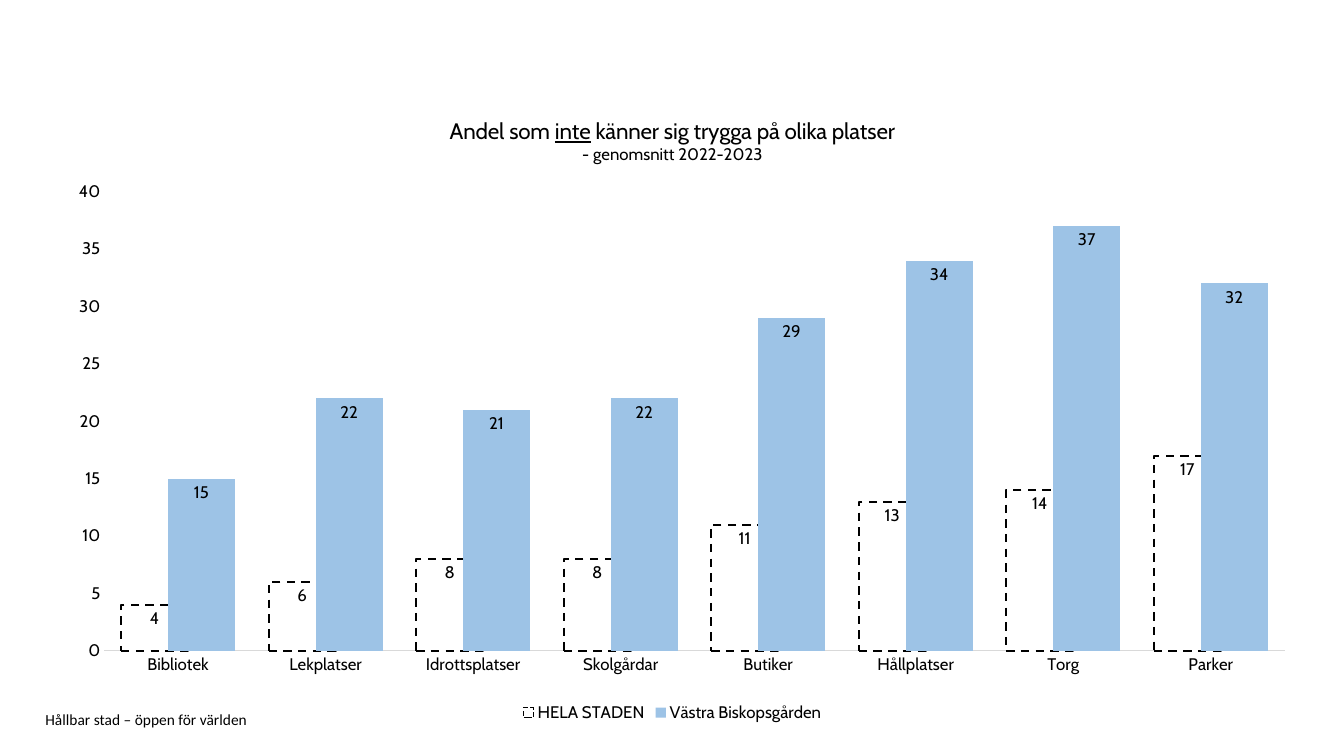
from dataclasses import dataclass

from lxml import etree
from pptx import Presentation
from pptx.chart.data import CategoryChartData
from pptx.dml.color import RGBColor
from pptx.enum.chart import XL_CHART_TYPE, XL_LABEL_POSITION, XL_LEGEND_POSITION, XL_TICK_MARK
from pptx.enum.dml import MSO_LINE
from pptx.enum.text import MSO_ANCHOR
from pptx.oxml.ns import qn
from pptx.util import Inches, Pt

CLUSTERED = XL_CHART_TYPE.COLUMN_CLUSTERED
INSIDE_END = XL_LABEL_POSITION.INSIDE_END
BOTTOM = XL_LEGEND_POSITION.BOTTOM
NO_TICK = XL_TICK_MARK.NONE
DASH = MSO_LINE.DASH
MIDDLE = MSO_ANCHOR.MIDDLE

WIDTH, HEIGHT = Inches(13.33), Inches(7.5)
LEFT = Inches(0.45)
FONT, FOOTER_FONT = "Cabin", "Calibri"
BLACK, WHITE, BLUE, GREY = "000000", "FFFFFF", "9DC3E6", "D9D9D9"
PLACES = ("Bibliotek", "Lekplatser", "Idrottsplatser", "Skolgårdar",
          "Butiker", "Hållplatser", "Torg", "Parker")
PLOT = {"x": 0.047, "y": 0.152, "w": 0.941, "h": 0.728}


@dataclass
class Area:
    name: str
    shares: tuple[int, ...]
    fill: str
    dashed: bool = False


@dataclass
class TitleRun:
    text: str
    size: int
    underline: bool = False


AREAS = (
    Area("HELA STADEN", (4, 6, 8, 8, 11, 13, 14, 17), WHITE, dashed=True),
    Area("Västra Biskopsgården", (15, 22, 21, 22, 29, 34, 37, 32), BLUE),
)
TITLE = (
    (TitleRun("Andel som ", 16), TitleRun("inte", 16, underline=True),
     TitleRun(" känner sig trygga på olika platser", 16)),
    (TitleRun("- genomsnitt 2022-2023", 12),),
)


def rgb(color: str) -> RGBColor:
    return RGBColor.from_string(color)


def set_font(font, size: float, name: str = FONT) -> None:
    font.name = name
    font.size = Pt(size)
    font.bold = False
    font.color.rgb = rgb(BLACK)


def add_title(chart) -> None:
    chart.has_title = True
    chart.chart_title.include_in_layout = False
    tf = chart.chart_title.text_frame
    for i, line in enumerate(TITLE):
        p = tf.add_paragraph() if i else tf.paragraphs[0]
        for part in line:
            r = p.add_run()
            r.text = part.text
            set_font(r.font, part.size)
            r.font.underline = part.underline


def place_plot(chart) -> None:
    """Fix the inner plot area at the PLOT shares of the chart's size."""
    area = chart._chartSpace.chart.plotArea
    for old in area.findall(qn("c:layout")):
        area.remove(old)
    layout = etree.Element(qn("c:layout"))
    manual = etree.SubElement(layout, qn("c:manualLayout"))
    settings = {"layoutTarget": "inner", "xMode": "edge", "yMode": "edge", **PLOT}
    for tag, value in settings.items():
        etree.SubElement(manual, qn(f"c:{tag}")).set("val", str(value))
    area.insert(0, layout)


def style_axes(chart) -> None:
    for axis in (chart.category_axis, chart.value_axis):
        axis.major_tick_mark = axis.minor_tick_mark = NO_TICK
        axis.has_major_gridlines = False
        set_font(axis.tick_labels.font, 12)
    line = chart.category_axis.format.line
    line.color.rgb = rgb(GREY)
    line.width = Pt(0.75)
    values = chart.value_axis
    values.minimum_scale, values.maximum_scale, values.major_unit = 0, 40, 5
    values.tick_labels.number_format = "0"
    values.tick_labels.number_format_is_linked = False
    values.format.line.fill.background()


def style_series(series, area: Area) -> None:
    series.invert_if_negative = False
    series.format.fill.solid()
    series.format.fill.fore_color.rgb = rgb(area.fill)
    line = series.format.line
    if area.dashed:
        line.color.rgb = rgb(BLACK)
        line.width = Pt(1.5)
        line.dash_style = DASH
    else:
        line.fill.background()
    labels = series.data_labels
    labels.show_value = True
    labels.position = INSIDE_END
    labels.number_format = "0"
    labels.number_format_is_linked = False
    set_font(labels.font, 12)


def add_safety_chart(s) -> None:
    data = CategoryChartData(number_format="0")
    data.categories = PLACES
    for area in AREAS:
        data.add_series(area.name, area.shares)
    chart = s.shapes.add_chart(CLUSTERED, LEFT, Inches(0.95),
                               Inches(12.44), Inches(6.26), data).chart
    set_font(chart.font, 12)
    add_title(chart)
    place_plot(chart)
    style_axes(chart)
    plot = chart.plots[0]
    plot.gap_width, plot.overlap = 50, 30
    plot.vary_by_categories = False
    for series, area in zip(plot.series, AREAS):
        style_series(series, area)
    chart.has_legend = True
    chart.legend.position = BOTTOM
    chart.legend.include_in_layout = False
    set_font(chart.legend.font, 12)


def add_footer(s) -> None:
    sp = s.shapes.add_textbox(LEFT, Inches(7.06), Inches(9.45), Inches(0.16))
    tf = sp.text_frame
    tf.word_wrap = True
    tf.vertical_anchor = MIDDLE
    tf.margin_left = tf.margin_top = tf.margin_right = tf.margin_bottom = 0
    r = tf.paragraphs[0].add_run()
    r.text = "Hållbar stad – öppen för världen"
    set_font(r.font, 11, FOOTER_FONT)


def main() -> None:
    prs = Presentation()
    prs.slide_width, prs.slide_height = WIDTH, HEIGHT
    s = prs.slides.add_slide(prs.slide_layouts[6])
    add_footer(s)
    add_safety_chart(s)
    prs.save("out.pptx")


if __name__ == "__main__":
    main()
